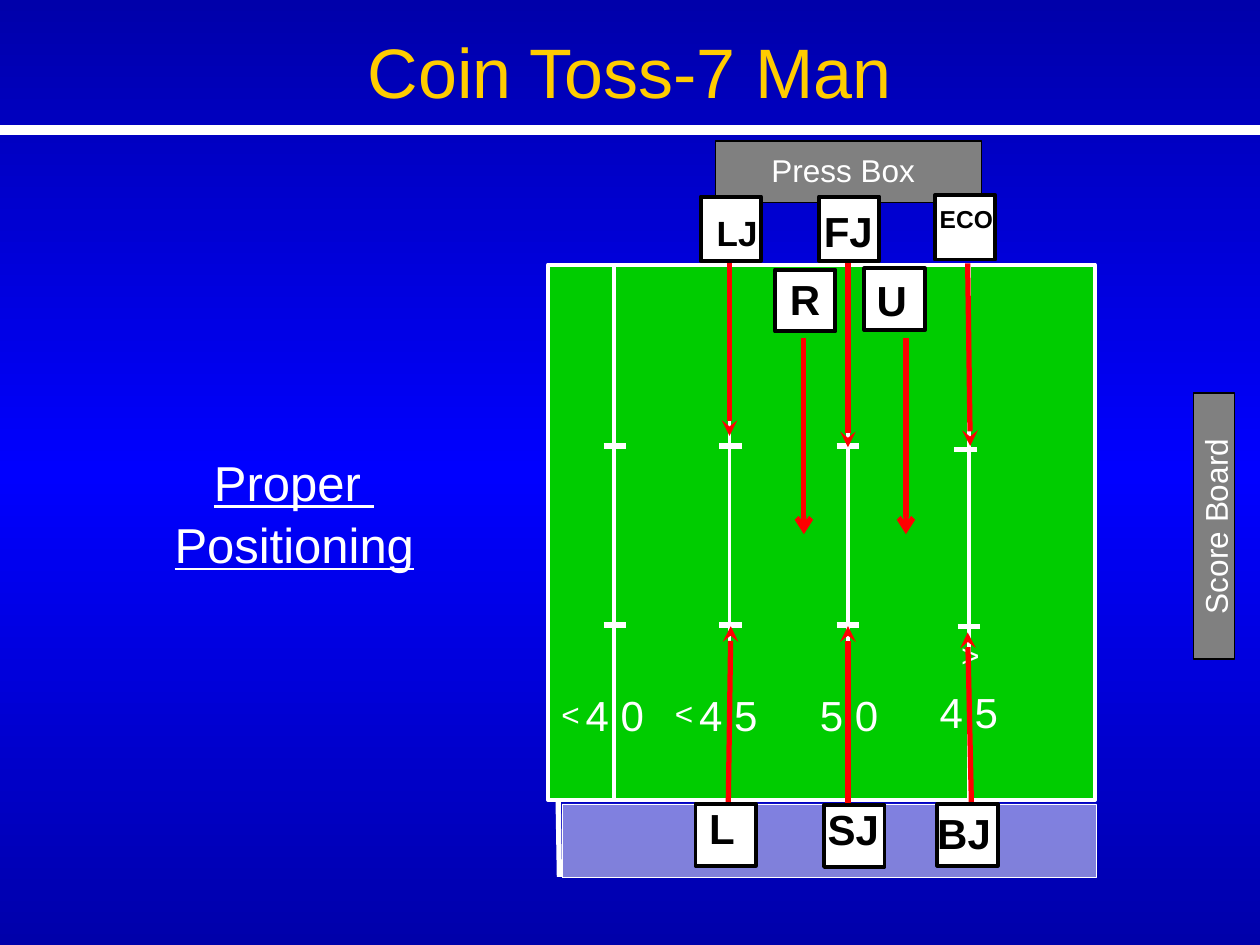
import copy

import pptx
import pptx.dml.color
import pptx.enum.dml
import pptx.enum.shapes
import pptx.enum.text
import pptx.oxml.ns
import pptx.util
from lxml import etree
from pptx.util import Inches

COLORS = {
    "navy": "0000AA", "blue": "0000FF", "white": "FFFFFF", "black": "000000",
    "gray": "808080", "green": "00CC00", "red": "FF0000", "gold": "FFCC00",
}
RGB = {name: pptx.dml.color.RGBColor.from_string(value) for name, value in COLORS.items()}
ALIGN = pptx.enum.text.PP_ALIGN
qn = pptx.oxml.ns.qn

presentation = pptx.Presentation()
presentation.slide_width = Inches(10)
presentation.slide_height = Inches(7.5)
slide = presentation.slides.add_slide(presentation.slide_layouts[6])


def add_text(text, left, top, width, height, size=18, color="white", align=ALIGN.RIGHT,
             bold=False, underline=False, wrap=False, rotation=0, space_before=0):
    box = slide.shapes.add_textbox(Inches(left), Inches(top), Inches(width), Inches(height))
    box.rotation = rotation
    box.text_frame.word_wrap = wrap
    box.text_frame.text = text
    for paragraph in box.text_frame.paragraphs:
        paragraph.alignment = align
        paragraph.space_before = pptx.util.Pt(space_before)
        font = paragraph.runs[0].font
        font.name = "Arial"
        font.size = pptx.util.Pt(size)
        font.bold = bold
        font.underline = underline
        font.color.rgb = RGB[color]


def add_part(left, top, right, bottom, line, width, fill=None, head=None):
    """Draw a rectangle when a fill is given, otherwise a straight line."""
    if fill:
        shape = slide.shapes.add_shape(
            pptx.enum.shapes.MSO_SHAPE.RECTANGLE,
            Inches(left), Inches(top), Inches(right - left), Inches(bottom - top))
        shape.shadow.inherit = False
        shape.fill.solid()
        shape.fill.fore_color.rgb = RGB[fill]
    else:
        shape = slide.shapes.add_connector(
            pptx.enum.shapes.MSO_CONNECTOR.STRAIGHT,
            Inches(left), Inches(top), Inches(right), Inches(bottom))
    shape.line.color.rgb = RGB[line]
    shape.line.width = pptx.util.Pt(width)
    if head:
        etree.SubElement(shape.line._get_or_add_ln(), qn("a:tailEnd"), type=head)
    if not fill:
        etree.SubElement(shape._element.spPr, qn("a:effectLst"))
    return shape


# Background: dark, bright, dark from top to bottom
background = slide.background.fill
background.gradient()
background.gradient_angle = 90
stops = background.gradient_stops
for stop, position, name in zip(stops, (0, 1), ("navy", "blue")):
    stop.position = position
    stop.color.rgb = RGB[name]
stop_list = background._xPr.find(qn("a:gradFill")).find(qn("a:gsLst"))
stop_list.append(copy.deepcopy(stop_list[0]))
stop_list[1].set("pos", "50000")
stop_list[2].set("pos", "100000")

# Title and caption
add_part(0, 1.03, 10, 1.03, "white", 6)
add_text("Coin Toss-7 Man", 1.27, 0.18, 7.45, 0.77, size=40, color="gold",
         align=ALIGN.CENTER, wrap=True)
add_text("Proper \nPositioning", 1.27, 3.54, 2.13, 1.89, size=28,
         align=ALIGN.CENTER, underline=True, space_before=2)

# Press box and score board
add_part(5.68, 1.12, 7.79, 1.61, "black", 0.75, fill="gray")
add_text("Press Box", 6.02, 1.15, 1.34, 0.4)
add_part(9.47, 3.12, 9.8, 5.23, "black", 0.75, fill="gray")
add_text("Score Board", 8.85, 3.98, 1.59, 0.4, wrap=True, rotation=270)

# Field with yard lines
add_part(4.35, 2.1, 8.69, 6.35, "white", 2.25, fill="green")
for x in (4.87, 5.79, 6.73, 7.69):
    add_part(x, 2.11, x, 6.36, "white", 2.25)

# Bench area below the field
add_part(4.43, 6.36, 4.44, 6.96, "white", 3)
bench = add_part(4.46, 6.38, 8.7, 6.96, "white", 0.25, fill="white")
bench.line.dash_style = pptx.enum.dml.MSO_LINE.ROUND_DOT
bench_color = bench._element.spPr.find(qn("a:solidFill"))[0]
etree.SubElement(bench_color, qn("a:alpha"), val="50000")

# Hash marks
for x, y in ((4.79, 3.54), (5.71, 3.54), (6.64, 3.54), (7.57, 3.57),
             (4.79, 4.96), (5.71, 4.96), (6.64, 4.96), (7.6, 4.97)):
    add_part(x, y, x + 0.18, y, "white", 3)

# Yard numbers and direction marks
for number, x, y in (("4 0", 4.45, 5.42), ("4 5", 5.35, 5.42),
                     ("5 0", 6.31, 5.42), ("4 5", 7.26, 5.4)):
    add_text(number, x, y, 0.76, 0.5, size=24, wrap=True)
for x, y, rotation in ((4.35, 5.47, 0), (5.25, 5.46, 0), (7.53, 5.03, 180)):
    add_text("<", x, y, 0.35, 0.4, rotation=rotation)

# Walking paths of the officials
for x1, y1, x2, y2, head in (
    (5.79, 2.07, 5.79, 3.46, "stealth"),
    (6.73, 2.07, 6.73, 3.55, "stealth"),
    (7.68, 2.09, 7.7, 3.54, "stealth"),
    (5.78, 6.39, 5.8, 4.97, "stealth"),
    (6.73, 6.39, 6.73, 4.97, "stealth"),
    (7.71, 6.39, 7.68, 5.02, "stealth"),
    (6.38, 2.68, 6.38, 4.24, "arrow"),
    (7.19, 2.68, 7.19, 4.24, "arrow"),
):
    add_part(x1, y1, x2, y2, "red", 3, head=head)

# Officials: label, square left, top and height, text left and top, size
for label, x, y, height, text_x, text_y, size in (
    ("LJ", 5.56, 1.56, 0.51, 5.59, 1.63, 20),
    ("FJ", 6.5, 1.56, 0.51, 6.44, 1.58, 24),
    ("ECO", 7.42, 1.55, 0.51, 7.36, 1.57, 14),
    ("R", 6.15, 2.14, 0.49, 6.17, 2.12, 24),
    ("U", 6.86, 2.13, 0.49, 6.86, 2.13, 24),
    ("L", 5.52, 6.38, 0.49, 5.53, 6.32, 24),
    ("SJ", 6.54, 6.39, 0.49, 6.47, 6.33, 24),
    ("BJ", 7.44, 6.38, 0.49, 7.34, 6.36, 24),
):
    add_part(x, y, x + 0.48, y + height, "black", 2.25, fill="white")
    add_text(label, text_x, text_y, 0.66, 0.5, size=size, color="black",
             align=ALIGN.LEFT, bold=True, wrap=True)

presentation.save("out.pptx")
